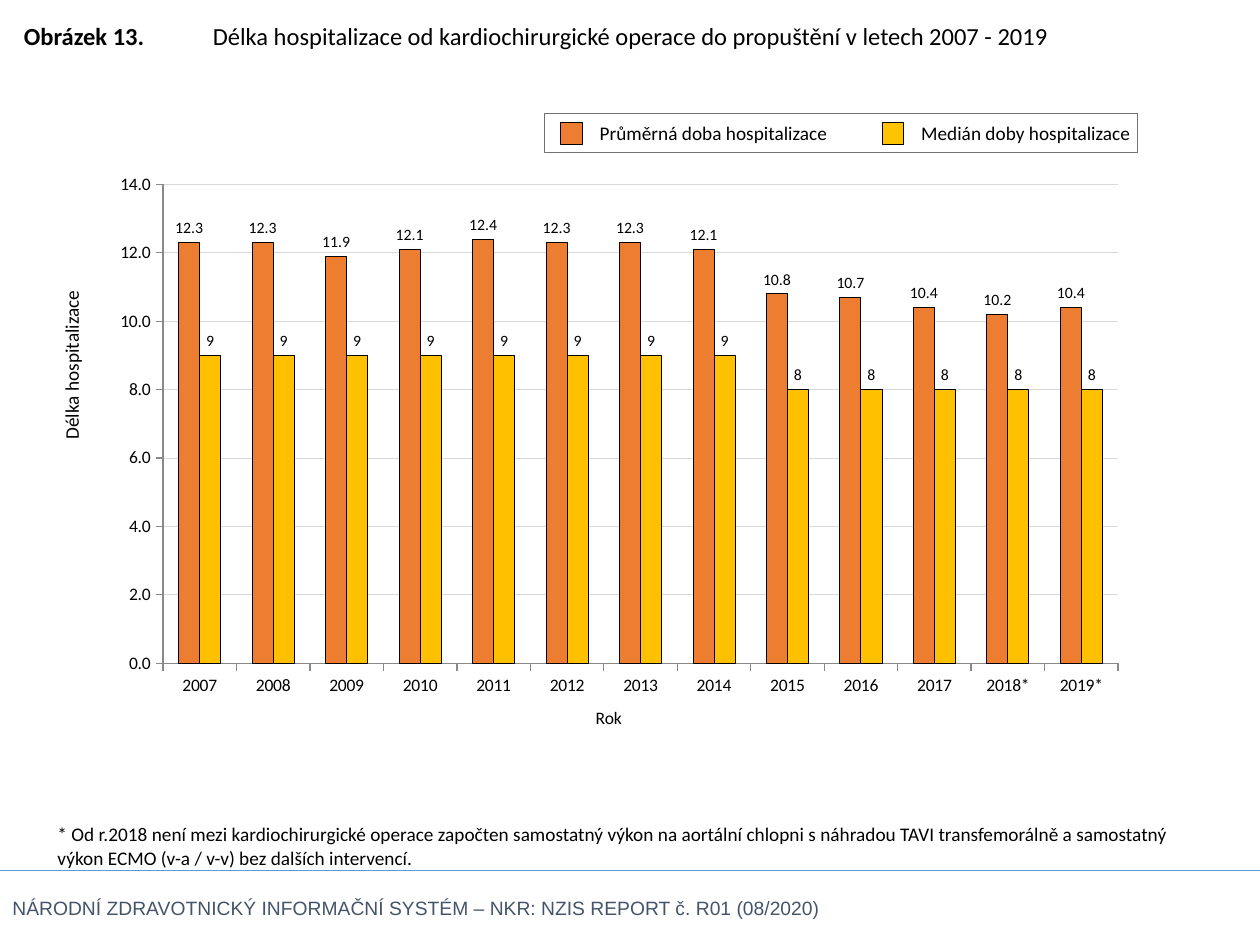
from lxml import etree
from pptx import Presentation
from pptx.chart.data import CategoryChartData
from pptx.dml.color import RGBColor
from pptx.enum.chart import XL_CHART_TYPE, XL_LABEL_POSITION, XL_TICK_MARK
from pptx.enum.shapes import MSO_CONNECTOR, MSO_SHAPE
from pptx.enum.text import MSO_ANCHOR, MSO_AUTO_SIZE
from pptx.oxml.ns import qn
from pptx.util import Cm, Pt

CLUSTERED = XL_CHART_TYPE.COLUMN_CLUSTERED
OUTSIDE_END = XL_LABEL_POSITION.OUTSIDE_END
TICK_OUT = XL_TICK_MARK.OUTSIDE
STRAIGHT = MSO_CONNECTOR.STRAIGHT
RECTANGLE = MSO_SHAPE.RECTANGLE
MIDDLE = MSO_ANCHOR.MIDDLE
GROW = MSO_AUTO_SIZE.SHAPE_TO_FIT_TEXT

BLACK = RGBColor(0x00, 0x00, 0x00)
ORANGE = RGBColor(0xED, 0x7D, 0x31)
YELLOW = RGBColor(0xFF, 0xC0, 0x00)
LEGEND_YELLOW = RGBColor(0xFF, 0xC3, 0x00)
BLUE = RGBColor(0x5B, 0x9B, 0xD5)
SLATE = RGBColor(0x44, 0x54, 0x6A)
FRAME_GREY = RGBColor(0x76, 0x71, 0x71)
AXIS_GREY = RGBColor(0x89, 0x89, 0x89)
GRID_GREY = RGBColor(0xD9, 0xD9, 0xD9)

YEARS = [str(year) for year in range(2007, 2018)] + ["2018*", "2019*"]
MEAN_DAYS = [12.3, 12.3, 11.9, 12.1, 12.4, 12.3, 12.3, 12.1, 10.8, 10.7, 10.4, 10.2, 10.4]
MEDIAN_DAYS = [9] * 8 + [8] * 5
MEAN_NAME = "Průměrná doba hospitalizace"
MEDIAN_NAME = "Medián doby hospitalizace"


def style_font(font, size, color=BLACK, name="Calibri", bold=False):
    for attribute, value in {"size": Pt(size), "name": name, "bold": bold}.items():
        setattr(font, attribute, value)
    font.color.rgb = color


def style_line(line, color, width):
    line.color.rgb = color
    line.width = Pt(width)


def add_text(shapes, box, runs, wrap=True, **frame_format):
    """Add one paragraph; runs pairs each text with its font values, box is in cm."""
    label = shapes.add_textbox(*map(Cm, box))
    frame = label.text_frame
    for attribute, value in {"word_wrap": wrap, "auto_size": GROW, **frame_format}.items():
        setattr(frame, attribute, value)
    for text, font_values in runs:
        run = frame.paragraphs[0].add_run()
        run.text = text
        style_font(run.font, **font_values)
    return label


def add_rectangle(shapes, box, fill, line_color, line_width):
    rectangle = shapes.add_shape(RECTANGLE, *map(Cm, box))
    rectangle.shadow.inherit = False
    if fill is None:
        rectangle.fill.background()
    else:
        rectangle.fill.solid()
        rectangle.fill.fore_color.rgb = fill
    style_line(rectangle.line, line_color, line_width)


def add_footer(slide, left, top, width):
    rule = slide.shapes.add_connector(STRAIGHT, Cm(left), Cm(top), Cm(left + width), Cm(top))
    style_line(rule.line, BLUE, 1)
    etree.SubElement(rule._element.spPr, qn("a:effectLst"))
    report = add_text(
        slide.shapes, (left, top + 0.36, 20.55, 0.71),
        [("NÁRODNÍ ZDRAVOTNICKÝ INFORMAČNÍ SYSTÉM – NKR: NZIS REPORT č. R01 (08/2020)",
          {"size": 11, "color": SLATE, "name": "Arial"})])
    paragraph = report.text_frame.paragraphs[0]
    paragraph.line_spacing = 1.07
    paragraph.space_after = Pt(8)


def add_title(slide, box):
    add_text(slide.shapes, box, [
        ("Obrázek 13. \t", {"size": 14, "bold": True}),
        ("Délka hospitalizace od kardiochirurgické operace do propuštění v letech 2007 - 2019",
         {"size": 14}),
    ])


def add_legend(slide, left, top, width, height):
    group = slide.shapes.add_group_shape().shapes
    swatch, label_height, entry_step = 0.43, 0.48, 6.48
    entries = [(MEAN_NAME, ORANGE, 4.67), (MEDIAN_NAME, LEGEND_YELLOW, 4.37)]
    for index, (name, color, label_width) in enumerate(entries):
        entry_left = left + 0.33 + index * entry_step
        add_text(group, (entry_left + 0.79, top + (height - label_height) / 2,
                         label_width, label_height),
                 [(name, {"size": 11})], vertical_anchor=MIDDLE,
                 margin_left=0, margin_right=0, margin_top=0, margin_bottom=0)
        add_rectangle(group, (entry_left, top + (height - swatch) / 2, swatch, swatch),
                      color, BLACK, 0.25)
    add_rectangle(group, (left, top, width, height), None, FRAME_GREY, 0.5)


def fix_plot_area(chart, x, y, w, h):
    """Place the inner plot area at fractions of the chart's size."""
    plot_area = chart._chartSpace.chart.plotArea
    for old_layout in plot_area.findall(qn("c:layout")):
        plot_area.remove(old_layout)
    layout = etree.Element(qn("c:layout"))
    plot_area.insert(0, layout)
    manual = etree.SubElement(layout, qn("c:manualLayout"))
    values = {"layoutTarget": "inner", "xMode": "edge", "yMode": "edge",
              "x": x, "y": y, "w": w, "h": h}
    for tag, value in values.items():
        etree.SubElement(manual, qn(f"c:{tag}")).set("val", str(value))


def add_stay_chart(slide, box):
    data = CategoryChartData()
    data.categories = YEARS
    data.add_series(MEAN_NAME, MEAN_DAYS, "0.0")
    data.add_series(MEDIAN_NAME, MEDIAN_DAYS, "0")
    chart = slide.shapes.add_chart(CLUSTERED, *map(Cm, box), data).chart
    chart.has_title = False
    chart.has_legend = False
    style_font(chart.font, 10)
    fix_plot_area(chart, 0.06, 0.04, 0.92, 0.88)

    for axis in (chart.category_axis, chart.value_axis):
        axis.major_tick_mark = TICK_OUT
        style_font(axis.tick_labels.font, 10)
        style_line(axis.format.line, AXIS_GREY, 0.75)
    days = chart.value_axis
    for attribute, value in {"minimum_scale": 0, "maximum_scale": 14, "major_unit": 2}.items():
        setattr(days, attribute, value)
    days.tick_labels.number_format = "0.0"
    days.tick_labels.number_format_is_linked = False
    style_line(days.major_gridlines.format.line, GRID_GREY, 0.5)

    plot = chart.plots[0]
    for attribute, value in {"gap_width": 150, "overlap": 0, "vary_by_categories": False}.items():
        setattr(plot, attribute, value)
    for series, color, number_format in zip(plot.series, (ORANGE, YELLOW), ("0.0", "0")):
        series.format.fill.solid()
        series.format.fill.fore_color.rgb = color
        style_line(series.format.line, BLACK, 0.5)
        label_format = {"show_value": True, "position": OUTSIDE_END,
                        "number_format": number_format, "number_format_is_linked": False}
        for attribute, value in label_format.items():
            setattr(series.data_labels, attribute, value)
        style_font(series.data_labels.font, 9)


def add_axis_titles(slide, days_box, year_box):
    days_title = add_text(slide.shapes, days_box, [("Délka hospitalizace", {"size": 11})],
                          wrap=False)
    days_title.rotation = 270
    add_text(slide.shapes, year_box, [("Rok", {"size": 10})])


def add_note(slide, box):
    add_text(slide.shapes, box, [
        ("* Od r.2018 není mezi kardiochirurgické operace započten samostatný výkon na aortální "
         "chlopni s náhradou TAVI transfemorálně a samostatný výkon ECMO (v-a / v-v) "
         "bez dalších intervencí.", {"size": 11})])


def main():
    presentation = Presentation()
    presentation.slide_width, presentation.slide_height = Cm(25.4), Cm(19.05)
    slide = presentation.slides.add_slide(presentation.slide_layouts[6])
    add_footer(slide, 0, 17.55, 25.4)
    add_title(slide, (0.23, 0.3, 22.6, 0.86))
    add_axis_titles(slide, (-0.33, 6.96, 3.56, 0.74), (11.76, 14.12, 1.32, 0.69))
    add_legend(slide, 10.97, 2.29, 11.96, 0.79)
    add_stay_chart(slide, (2.03, 3.28, 20.93, 10.97))
    add_note(slide, (0.91, 16.46, 23.55, 1.19))
    presentation.save("out.pptx")


if __name__ == "__main__":
    main()
